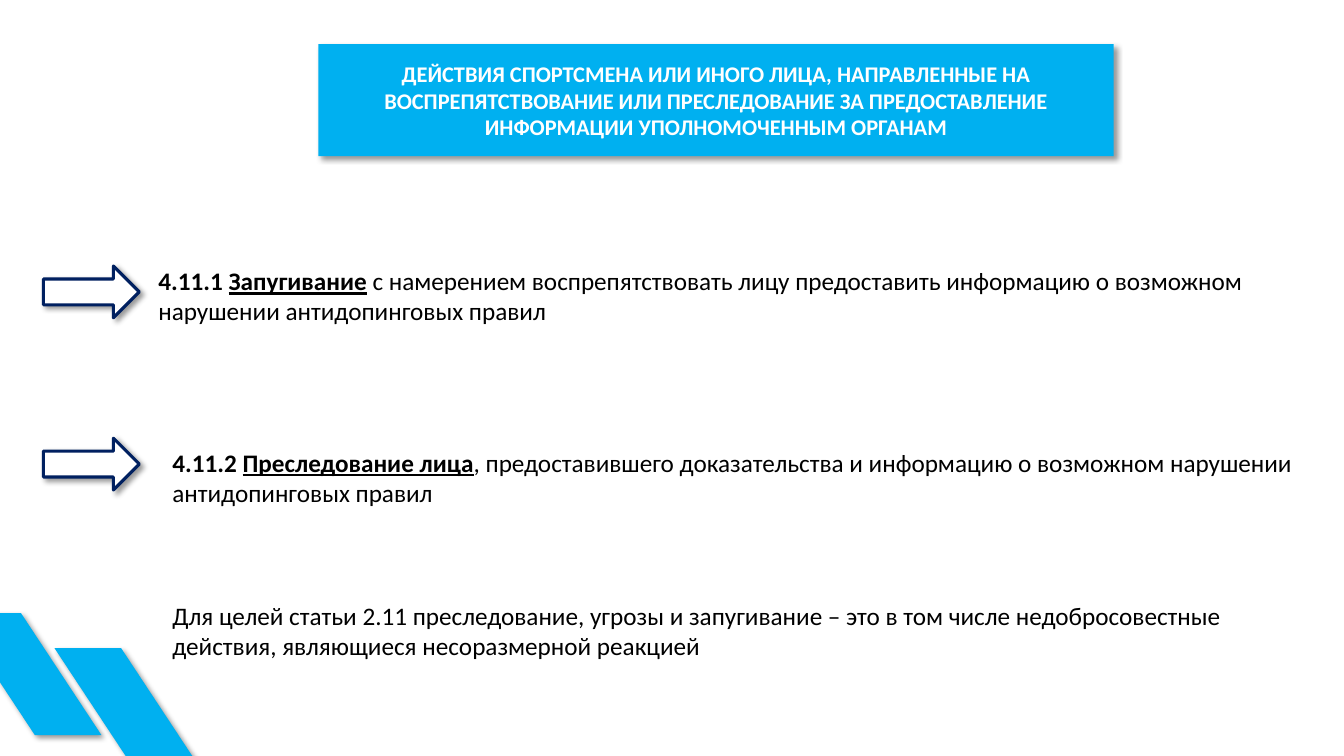
from dataclasses import dataclass

from lxml import etree
from pptx import Presentation
from pptx.dml.color import RGBColor
from pptx.enum.shapes import MSO_SHAPE
from pptx.enum.text import MSO_ANCHOR, PP_ALIGN
from pptx.oxml.ns import qn
from pptx.util import Pt

RECT = MSO_SHAPE.RECTANGLE
ARROW = MSO_SHAPE.RIGHT_ARROW
SLANT = MSO_SHAPE.PARALLELOGRAM
MIDDLE = MSO_ANCHOR.MIDDLE
CENTER = PP_ALIGN.CENTER


@dataclass(frozen=True)
class Theme:
    sky: RGBColor = RGBColor(0x00, 0xB0, 0xF0)
    navy: RGBColor = RGBColor(0x00, 0x20, 0x60)
    white: RGBColor = RGBColor(0xFF, 0xFF, 0xFF)
    black: RGBColor = RGBColor(0x00, 0x00, 0x00)
    font: str = "Calibri"
    title: int = 16
    body: int = 18


THEME = Theme()

TITLE = (
    "ДЕЙСТВИЯ СПОРТСМЕНА ИЛИ ИНОГО ЛИЦА, НАПРАВЛЕННЫЕ НА "
    "ВОСПРЕПЯТСТВОВАНИЕ ИЛИ ПРЕСЛЕДОВАНИЕ ЗА ПРЕДОСТАВЛЕНИЕ "
    "ИНФОРМАЦИИ УПОЛНОМОЧЕННЫМ ОРГАНАМ"
)
THREAT = (
    "4.11.1 ",
    "Запугивание",
    " с намерением воспрепятствовать лицу предоставить информацию "
    "о возможном нарушении антидопинговых правил",
)
REVENGE = (
    "4.11.2 ",
    "Преследование лица",
    ", предоставившего доказательства и информацию "
    "о возможном нарушении антидопинговых правил",
)
NOTE = (
    "Для целей статьи 2.11 преследование, угрозы и запугивание – это в том "
    "числе недобросовестные действия, являющиеся несоразмерной реакцией"
)


def add_shadow(shape):
    """Cast a soft shadow down and to the right."""
    shape.shadow.inherit = False
    effects = shape._element.spPr.find(qn("a:effectLst"))
    outer = etree.SubElement(
        effects, qn("a:outerShdw"), blurRad=str(Pt(4)), dist=str(Pt(3)),
        dir=str(45 * 60000), algn="tl", rotWithShape="0",
    )
    color = etree.SubElement(outer, qn("a:srgbClr"), val=str(THEME.black))
    etree.SubElement(color, qn("a:alpha"), val="40000")


def add_block(slide, kind, box, fill, line=None):
    shape = slide.shapes.add_shape(kind, *map(Pt, box))
    shape.fill.solid()
    shape.fill.fore_color.rgb = fill
    if line is None:
        shape.line.fill.background()
    else:
        shape.line.color.rgb = line
        shape.line.width = Pt(2.25)
    add_shadow(shape)
    return shape


def add_slant(slide, left, top):
    shape = add_block(slide, SLANT, (left, top, 105, 87), THEME.sky)
    shape.adjustments[0] = 0.66
    shape._element.spPr.get_or_add_xfrm().set("flipH", "1")


def set_frame(frame):
    frame.word_wrap = True
    frame.margin_left = frame.margin_right = Pt(3.6)
    frame.margin_top = frame.margin_bottom = Pt(3.6)


def set_font(para, size, color):
    para.font.name = THEME.font
    para.font.size = Pt(size)
    para.font.color.rgb = color


def add_title(slide):
    frame = add_block(slide, RECT, (227.5, 31.5, 568, 80), THEME.sky).text_frame
    set_frame(frame)
    frame.vertical_anchor = MIDDLE
    para = frame.paragraphs[0]
    para.text = TITLE
    para.alignment = CENTER
    para.font.bold = True
    set_font(para, THEME.title, THEME.white)


def add_clause(slide, box, clause):
    """Write a bold number, an underlined term and plain wording."""
    frame = slide.shapes.add_textbox(*map(Pt, box)).text_frame
    set_frame(frame)
    para = frame.paragraphs[0]
    set_font(para, THEME.body, THEME.black)
    number, term, rest = clause
    para.add_run().text = number
    para.add_run().text = term
    for run in para.runs:
        run.font.bold = True
    para.runs[1].font.underline = True
    para.add_run().text = rest
    return frame


def add_note(frame):
    para = frame.add_paragraph()
    para.text = NOTE
    para.space_before = Pt(66)
    set_font(para, THEME.body, THEME.black)


def main():
    deck = Presentation()
    deck.slide_width, deck.slide_height = Pt(960), Pt(540)
    slide = deck.slides.add_slide(deck.slide_layouts[6])
    add_slant(slide, 39, 463)
    add_slant(slide, -32.5, 438)
    add_clause(slide, (109.5, 186, 832, 51), THREAT)
    frame = add_clause(slide, (119.5, 316, 832, 160), REVENGE)
    add_note(frame)
    add_title(slide)
    for top in (190, 313):
        add_block(slide, ARROW, (31, top, 68.5, 37), THEME.white, THEME.navy)
    deck.save("out.pptx")


if __name__ == "__main__":
    main()
